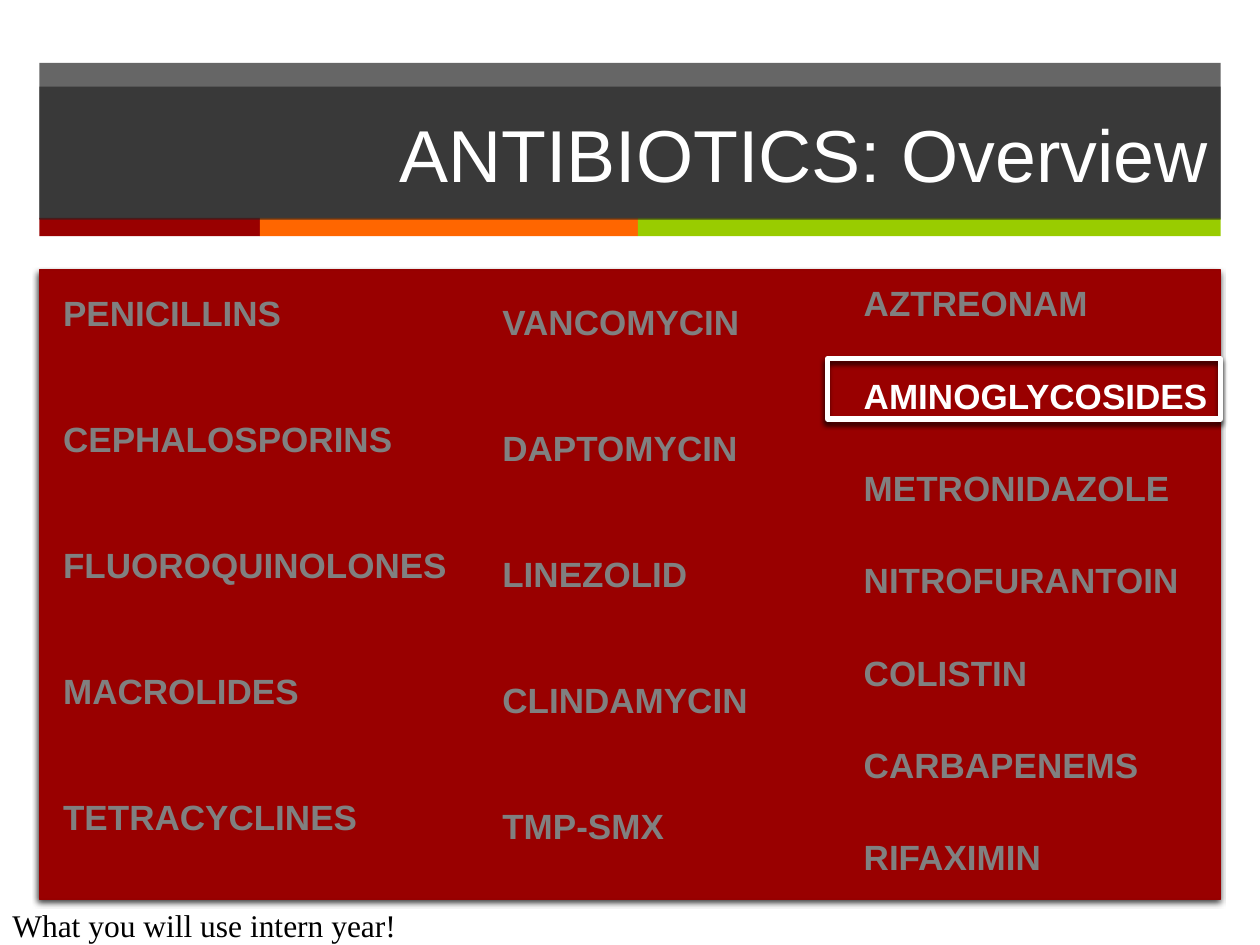
from dataclasses import dataclass

from lxml.etree import SubElement
from pptx import Presentation
from pptx.dml.color import RGBColor
from pptx.enum.shapes import MSO_SHAPE
from pptx.enum.text import MSO_ANCHOR, MSO_AUTO_SIZE, PP_ALIGN
from pptx.oxml.ns import qn
from pptx.util import Pt

WHITE = RGBColor(0xFF, 0xFF, 0xFF)
BLACK = RGBColor(0x00, 0x00, 0x00)
CHARCOAL = RGBColor(0x26, 0x26, 0x26)
GRAY = RGBColor(0x80, 0x80, 0x80)
RED = RGBColor(0x99, 0x00, 0x00)
DARK_RED = RGBColor(0x96, 0x00, 0x00)
ORANGE = RGBColor(0xFF, 0x66, 0x00)
GREEN = RGBColor(0x99, 0xCC, 0x00)

MARGIN = 22.5
CONTENT_WIDTH = 675


@dataclass(frozen=True)
class Box:
    left: float
    top: float
    width: float
    height: float

    def lengths(self) -> tuple:
        return Pt(self.left), Pt(self.top), Pt(self.width), Pt(self.height)


@dataclass(frozen=True)
class DrugColumn:
    box: Box
    names: tuple
    gap: float
    line_spacing: float = 1.0


HEADER = Box(MARGIN, 36, CONTENT_WIDTH, 89)
TITLE = Box(MARGIN, 49.5, CONTENT_WIDTH, 76)
PANEL = Box(MARGIN, 154.5, CONTENT_WIDTH, 359.5)
HIGHLIGHT = Box(473, 205, 224.5, 34.5)
FOOTNOTE = Box(0, 514, 236, 29)
HIGHLIGHTED_NAME = "AMINOGLYCOSIDES"
STRIPES = ((126, RED), (216, ORANGE), (333, GREEN))
COLUMNS = (
    DrugColumn(
        Box(29, 163, 374, 346),
        ("PENICILLINS", "CEPHALOSPORINS", "FLUOROQUINOLONES", "MACROLIDES", "TETRACYCLINES"),
        gap=48,
    ),
    DrugColumn(
        Box(486.5, 155, 360, 353.5),
        ("AZTREONAM", HIGHLIGHTED_NAME, "METRONIDAZOLE", "NITROFURANTOIN",
         "COLISTIN", "CARBAPENEMS", "RIFAXIMIN"),
        gap=26.4,
        line_spacing=1.1,
    ),
    DrugColumn(
        Box(280, 168, 413, 322.5),
        ("VANCOMYCIN", "DAPTOMYCIN", "LINEZOLID", "CLINDAMYCIN", "TMP-SMX"),
        gap=48,
    ),
)


def add_rectangle(page, box: Box, fill=None, line=None, line_width: float = 1):
    shape = page.shapes.add_shape(MSO_SHAPE.RECTANGLE, *box.lengths())
    shape.shadow.inherit = False
    if fill is None:
        shape.fill.background()
    else:
        shape.fill.solid()
        shape.fill.fore_color.rgb = fill
    if line is None:
        shape.line.fill.background()
    else:
        shape.line.color.rgb = line
        shape.line.width = Pt(line_width)
    return shape


def set_opacity(color, percent: int) -> None:
    SubElement(color, qn("a:alpha"), val=str(percent * 1000))


def make_translucent(shape, percent: int) -> None:
    set_opacity(shape.element.spPr.find(qn("a:solidFill"))[0], percent)


def add_shadow(shape) -> None:
    effects = shape.element.spPr.find(qn("a:effectLst"))
    shadow = SubElement(
        effects, qn("a:outerShdw"), blurRad=str(Pt(3)), dist=str(Pt(2)),
        dir=str(110 * 60000), algn="ctr", rotWithShape="0",
    )
    set_opacity(SubElement(shadow, qn("a:srgbClr"), val=str(BLACK)), 75)


def write_text(para, text: str, *, size: float, color: RGBColor,
               font: str = "Arial", bold: bool = False, align=PP_ALIGN.LEFT) -> None:
    para.alignment = align
    span = para.add_run()
    span.text = text
    span.font.name = font
    span.font.size = Pt(size)
    span.font.bold = bold
    span.font.color.rgb = color


def add_text_frame(page, box: Box, wrap: bool = True):
    frame = page.shapes.add_textbox(*box.lengths()).text_frame
    frame.word_wrap = wrap
    frame.auto_size = MSO_AUTO_SIZE.SHAPE_TO_FIT_TEXT
    return frame


def add_column(page, column: DrugColumn) -> None:
    frame = add_text_frame(page, column.box)
    for index, name in enumerate(column.names):
        para = frame.add_paragraph() if index else frame.paragraphs[0]
        para.line_spacing = column.line_spacing
        if index:
            para.space_before = Pt(column.gap)
        color = WHITE if name == HIGHLIGHTED_NAME else GRAY
        write_text(para, name, size=20, color=color, bold=True)


def add_header(page) -> None:
    make_translucent(add_rectangle(page, HEADER, CHARCOAL), 70)
    left = MARGIN
    for width, color in STRIPES:
        add_rectangle(page, Box(left, 124.5, width, 10.5), color)
        left += width


def add_title(page) -> None:
    title = add_rectangle(page, TITLE, CHARCOAL)
    make_translucent(title, 70)
    title.text_frame.vertical_anchor = MSO_ANCHOR.MIDDLE
    write_text(title.text_frame.paragraphs[0], "ANTIBIOTICS: Overview",
               size=42, color=WHITE, align=PP_ALIGN.RIGHT)


def main() -> None:
    deck = Presentation()
    deck.slide_width, deck.slide_height = Pt(720), Pt(540)
    page = deck.slides.add_slide(deck.slide_layouts[6])
    add_header(page)
    add_shadow(add_rectangle(page, PANEL, RED, DARK_RED))
    add_title(page)
    for column in COLUMNS:
        add_column(page, column)
    footnote = add_text_frame(page, FOOTNOTE, wrap=False)
    write_text(footnote.paragraphs[0], "What you will use intern year!",
               size=18, color=BLACK, font="Times New Roman")
    add_shadow(add_rectangle(page, HIGHLIGHT, line=WHITE, line_width=3))
    deck.save("out.pptx")


if __name__ == "__main__":
    main()
